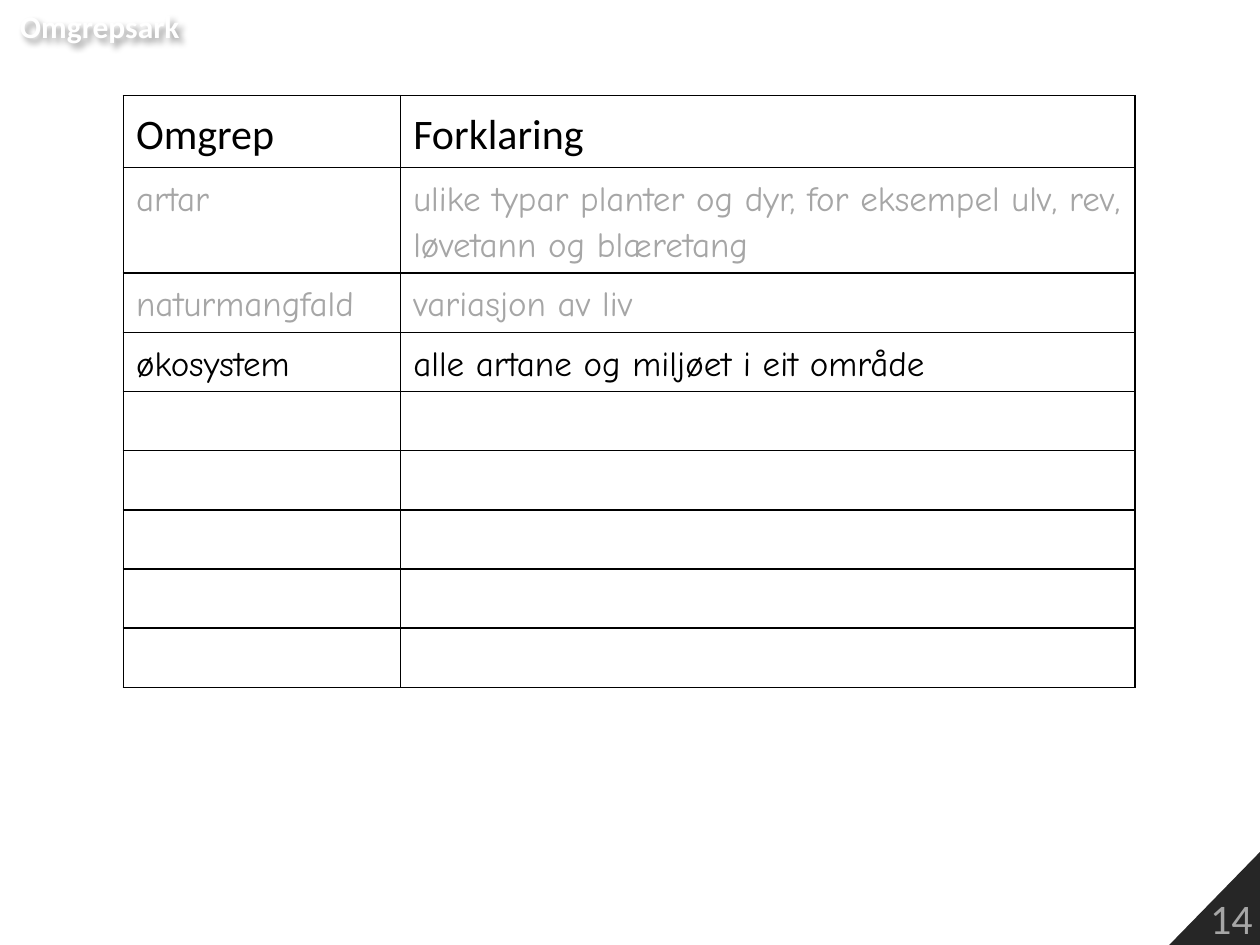
from lxml import etree
from pptx import Presentation
from pptx.dml.color import RGBColor
from pptx.enum.text import MSO_ANCHOR, PP_ALIGN
from pptx.oxml import parse_xml
from pptx.oxml.ns import nsdecls, qn
from pptx.util import Inches, Pt

TOP, MIDDLE, BOTTOM = MSO_ANCHOR.TOP, MSO_ANCHOR.MIDDLE, MSO_ANCHOR.BOTTOM
RIGHT = PP_ALIGN.RIGHT

BLACK, WHITE, GREY, DARK = "000000", "FFFFFF", "A6A6A6", "262626"
HEADING_FONT, HAND_FONT = "Calibri", "Comic Neue"

HEADINGS = ("Omgrep", "Forklaring")
TERMS = [
    ("artar", "ulike typar planter og dyr, for eksempel ulv, rev, "
              "løvetann og blæretang", GREY),
    ("naturmangfald", "variasjon av liv", GREY),
    ("økosystem", "alle artane og miljøet i eit område", BLACK),
]
EMPTY_ROWS = 5
COLUMN_WIDTHS = (2.2, 5.83)
HEADER_HEIGHT, TALL_HEIGHT, ROW_HEIGHT = 0.56, 0.84, 0.47


def color(hex_code):
    return RGBColor.from_string(hex_code)


def add_run(paragraph, text, size, font, hex_code, bold=False):
    run = paragraph.add_run()
    run.text = text
    run.font.size = Pt(size)
    run.font.name = font
    run.font.bold = bold
    run.font.color.rgb = color(hex_code)


def add_page_corner(slide, number):
    left, top, right, bottom = map(Inches, (9.25, 6.72, 10.04, 7.53))
    builder = slide.shapes.build_freeform(left, bottom)
    builder.add_line_segments([(right, top), (right, bottom)], close=True)
    corner = builder.convert_to_shape()
    corner.shadow.inherit = False
    corner.fill.solid()
    corner.fill.fore_color.rgb = color(DARK)
    corner.line.fill.background()
    frame = corner.text_frame
    frame.word_wrap = False
    frame.vertical_anchor = BOTTOM
    frame.paragraphs[0].alignment = RIGHT
    add_run(frame.paragraphs[0], number, 24, HEADING_FONT, GREY)


def add_borders(cell):
    properties = cell._tc.get_or_add_tcPr()
    for index, side in enumerate(("lnL", "lnR", "lnT", "lnB")):
        properties.insert(index, parse_xml(
            f'<a:{side} {nsdecls("a")} w="{Pt(1)}"><a:solidFill>'
            f'<a:srgbClr val="{BLACK}"/></a:solidFill></a:{side}>'))


def fill_cell(cell, text, size, font, hex_code, anchor):
    cell.vertical_anchor = anchor
    paragraph = cell.text_frame.paragraphs[0]
    paragraph.line_spacing = 1.15
    add_run(paragraph, text, size, font, hex_code)


def add_term_table(slide):
    heights = [HEADER_HEIGHT, TALL_HEIGHT]
    heights += [ROW_HEIGHT] * (len(TERMS) - 1 + EMPTY_ROWS)
    table = slide.shapes.add_table(
        len(heights), len(COLUMN_WIDTHS), Inches(0.98), Inches(0.76),
        Inches(sum(COLUMN_WIDTHS)), Inches(sum(heights))).table
    table.first_row = table.horz_banding = False
    for column, width in zip(table.columns, COLUMN_WIDTHS):
        column.width = Inches(width)
    for row, height in zip(table.rows, heights):
        row.height = Inches(height)
    for cell in table.iter_cells():
        cell.fill.background()
        add_borders(cell)

    # Headings, then one row for each term
    for column, heading in enumerate(HEADINGS):
        fill_cell(table.cell(0, column), heading, 24, HEADING_FONT, BLACK, MIDDLE)
    for row, (term, meaning, hex_code) in enumerate(TERMS, start=1):
        for column, text in enumerate((term, meaning)):
            fill_cell(table.cell(row, column), text, 20, HAND_FONT, hex_code, TOP)


def add_shadow(shape):
    # On an unfilled box the shadow falls from the letters
    shape.shadow.inherit = False
    effects = shape._element.spPr.find(qn("a:effectLst"))
    shadow = etree.SubElement(effects, qn("a:outerShdw"), blurRad=str(Pt(4)),
                              dist=str(Pt(3)), dir="2700000", algn="tl",
                              rotWithShape="0")
    shade = etree.SubElement(shadow, qn("a:srgbClr"), val=BLACK)
    etree.SubElement(shade, qn("a:alpha"), val="40000")


def add_title(slide, text):
    title = slide.shapes.add_textbox(
        Inches(0.06), Inches(0.01), Inches(1.48), Inches(0.4))
    title.fill.background()
    title.text_frame.word_wrap = False
    add_run(title.text_frame.paragraphs[0], text, 18, HEADING_FONT, WHITE,
            bold=True)
    add_shadow(title)


def main():
    deck = Presentation()
    deck.slide_width, deck.slide_height = Inches(10), Inches(7.5)
    slide = deck.slides.add_slide(deck.slide_layouts[6])
    add_page_corner(slide, "14")
    add_term_table(slide)
    add_title(slide, "Omgrepsark")
    deck.save("out.pptx")


if __name__ == "__main__":
    main()
